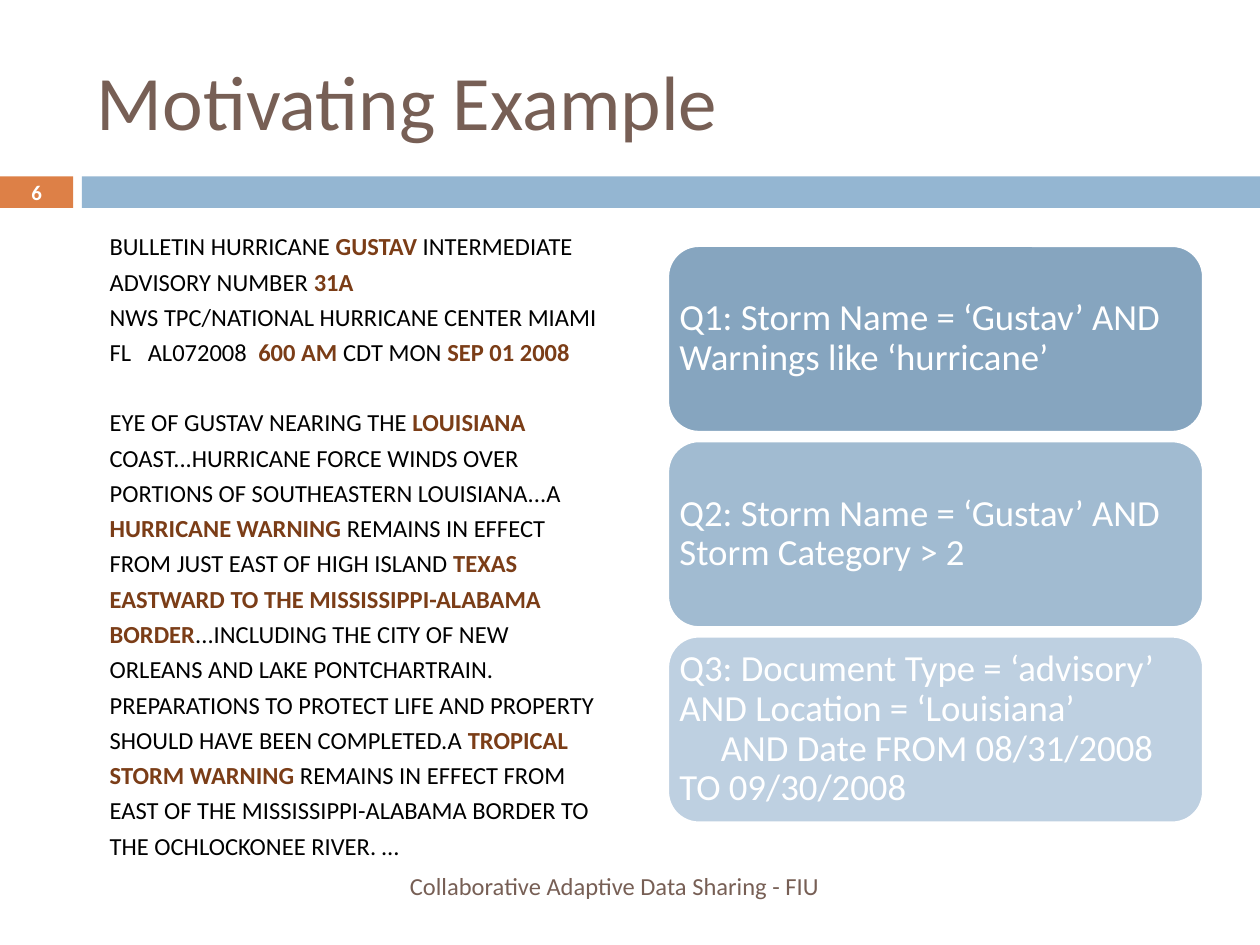
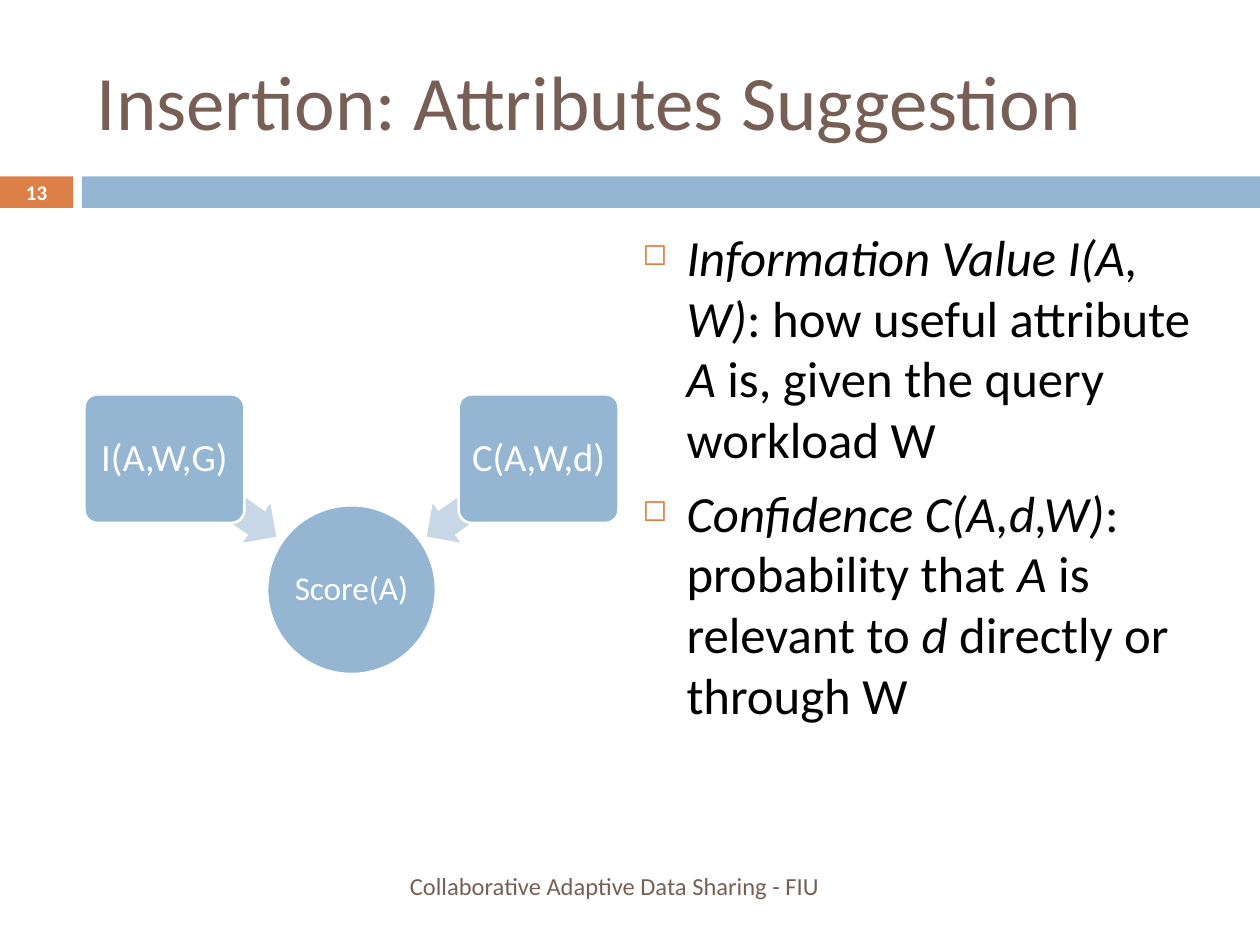
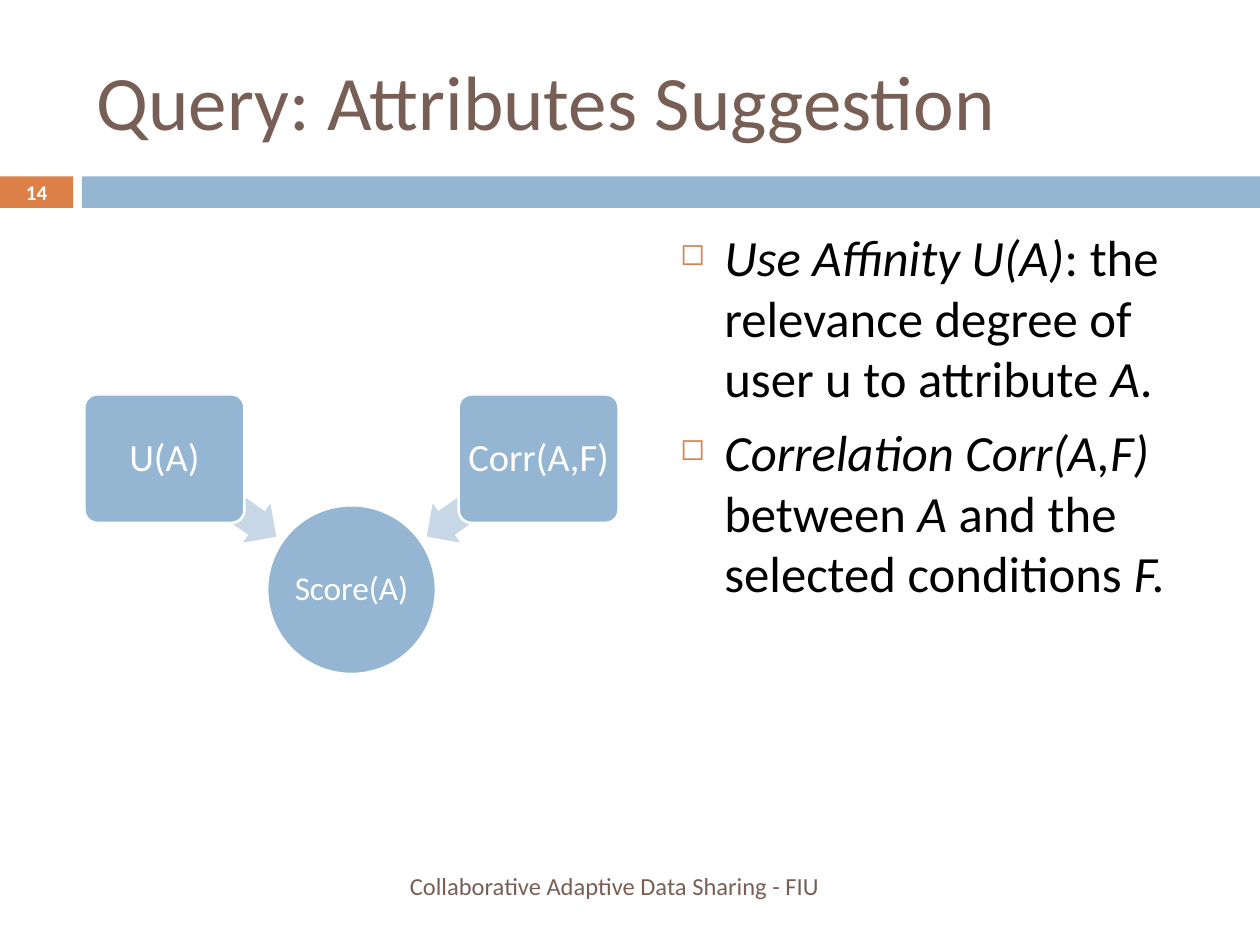
import pptx
import pptx.util
from pptx.dml.color import RGBColor
from pptx.enum.shapes import MSO_SHAPE
from pptx.enum.text import MSO_ANCHOR, PP_ALIGN
from pptx.oxml import parse_xml
from pptx.oxml.ns import nsdecls

Inches = pptx.util.Inches
Pt = pptx.util.Pt

BLACK = RGBColor(0x00, 0x00, 0x00)
WHITE = RGBColor(0xFF, 0xFF, 0xFF)
TAUPE = RGBColor(0x77, 0x5F, 0x55)
ORANGE = RGBColor(0xDD, 0x80, 0x47)
BLUE = RGBColor(0x94, 0xB6, 0xD2)
PALE_BLUE = RGBColor(0xC8, 0xD7, 0xE5)
BROWN = RGBColor(0x7B, 0x3D, 0x17)
QUERY_BLUES = [
    RGBColor(0x86, 0xA5, 0xBF),
    RGBColor(0xA1, 0xBB, 0xD1),
    RGBColor(0xBE, 0xD0, 0xE1),
]
FONT = "Calibri"


def add_box(slide, box, kind=None, fill=None, outlined=False, inset=None):
    lengths = [Inches(length) for length in box]
    if kind is None:
        shape = slide.shapes.add_textbox(*lengths)
    else:
        shape = slide.shapes.add_shape(kind, *lengths)
        shape.shadow.inherit = False
        shape.fill.solid()
        shape.fill.fore_color.rgb = fill
        if outlined:
            shape.line.color.rgb = WHITE
            shape.line.width = Pt(1.5)
        else:
            shape.line.fill.background()
    frame = shape.text_frame
    frame.word_wrap = True
    frame.vertical_anchor = MSO_ANCHOR.TOP if kind is None else MSO_ANCHOR.MIDDLE
    if inset is not None:
        frame.margin_left = frame.margin_right = Inches(inset)
        frame.margin_top = frame.margin_bottom = Inches(inset)
    return shape


def add_paragraph(frame, runs, size, color, align=PP_ALIGN.LEFT, spacing=None):
    paragraph = frame.add_paragraph() if frame.text else frame.paragraphs[0]
    paragraph.alignment = align
    paragraph.line_spacing = spacing
    paragraph.font.name = FONT
    paragraph.font.size = Pt(size)
    paragraph.font.color.rgb = color
    for text in runs:
        paragraph.add_run().text = text
    return paragraph


deck = pptx.Presentation()
deck.slide_width = Inches(10)
deck.slide_height = Inches(7.5)

slides = []
for number, heading in [
    ("6", "Motivating Example"),
    ("13", "Insertion: Attributes Suggestion"),
    ("14", "Query: Attributes Suggestion"),
]:
    slide = deck.slides.add_slide(deck.slide_layouts[6])
    slides.append(slide)
    number_band = add_box(slide, (0, 1.4, 0.58, 0.25), MSO_SHAPE.RECTANGLE, ORANGE, inset=0)
    page = add_paragraph(number_band.text_frame, [number], 11.9, WHITE, PP_ALIGN.CENTER)
    page.font.bold = True
    add_box(slide, (0.65, 1.4, 9.35, 0.25), MSO_SHAPE.RECTANGLE, BLUE)
    title = add_box(slide, (0.67, 0.25, 8.92, 1.08))
    title.text_frame.vertical_anchor = MSO_ANCHOR.MIDDLE
    add_paragraph(title.text_frame, [heading], 44, TAUPE)
    footer = add_box(slide, (0.67, 6.83, 5.93, 0.4))
    footer.text_frame.vertical_anchor = MSO_ANCHOR.MIDDLE
    add_paragraph(
        footer.text_frame, ["Collaborative Adaptive Data Sharing - FIU"], 14, TAUPE, PP_ALIGN.RIGHT
    )

example, insertion, query = slides

bulletin_lines = [
    ["BULLETIN HURRICANE ", "GUSTAV ", "INTERMEDIATE ADVISORY NUMBER ", "31A"],
    [
        "NWS TPC/NATIONAL HURRICANE CENTER MIAMI FL   AL072008  ",
        "600 AM",
        " CDT MON ",
        "SEP 01 2008",
    ],
    [
        "EYE OF GUSTAV NEARING THE ",
        "LOUISIANA",
        " COAST...HURRICANE FORCE WINDS OVER PORTIONS OF SOUTHEASTERN LOUISIANA...A ",
        "HURRICANE WARNING ",
        "REMAINS IN EFFECT FROM JUST EAST OF HIGH ISLAND ",
        "TEXAS EASTWARD TO THE MISSISSIPPI-ALABAMA BORDER",
        "...INCLUDING THE CITY OF NEW ORLEANS AND LAKE PONTCHARTRAIN. PREPARATIONS TO "
        "PROTECT LIFE AND PROPERTY SHOULD HAVE BEEN COMPLETED.A ",
        "TROPICAL STORM WARNING",
        " REMAINS IN EFFECT FROM EAST OF THE MISSISSIPPI-ALABAMA BORDER TO THE "
        "OCHLOCKONEE RIVER. …",
    ],
]
bulletin = add_box(example, (0.67, 1.74, 4.25, 5))
bulletin.text_frame.margin_left = Inches(0.2)
for runs in bulletin_lines:
    paragraph = add_paragraph(bulletin.text_frame, runs, 14, BLACK, spacing=1.2)
    for annotated in paragraph.runs[1::2]:
        annotated.font.bold = True
        annotated.font.color.rgb = BROWN
paragraph.space_before = Pt(20)

queries = [
    ["Q1: Storm Name = ‘Gustav’ AND Warnings like ‘hurricane’"],
    ["Q2: Storm Name = ‘Gustav’ AND Storm Category > 2"],
    [
        "Q3: Document Type = ‘advisory’ AND Location = ‘Louisiana’",
        "AND Date FROM 08/31/2008 TO 09/30/2008",
    ],
]
for row, (conditions, fill) in enumerate(zip(queries, QUERY_BLUES)):
    card = add_box(
        example, (5.3, 1.95 + 1.55 * row, 4.25, 1.48),
        MSO_SHAPE.ROUNDED_RECTANGLE, fill, outlined=True, inset=0.02,
    )
    for position, condition in enumerate(conditions):
        paragraph = add_paragraph(card.text_frame, [condition], 21, WHITE, spacing=0.9)
        if position:
            paragraph._p.get_or_add_pPr().set("indent", str(Inches(0.33)))

score_slides = [
    (insertion, ["I(A,W,G)", "C(A,W,d)"], 5, [
        ["Information Value I(A, W)", ": how useful attribute ", "A ",
         "is, given the query workload W"],
        ["Confidence C(A,d,W)", ": probability that ", "A ", "is relevant to ", "d ",
         "directly or through W"],
    ]),
    (query, ["U(A)", "Corr(A,F)"], 5.3, [
        ["Use Affinity U(A)", ": the relevance degree of user u to attribute ", "A", "."],
        ["Correlation Corr(A,F)", " between ", "A ", "and the selected conditions ", "F."],
    ]),
]
for slide, factors, left, definitions in score_slides:
    score = add_box(
        slide, (2.12, 4.01, 1.34, 1.34), MSO_SHAPE.OVAL, BLUE, outlined=True, inset=0.01
    )
    add_paragraph(score.text_frame, ["Score(A)"], 19, WHITE, PP_ALIGN.CENTER, 0.9)
    for factor, factor_left, arrow_left, angle in zip(
        factors, (0.67, 3.64), (1.21, 3.29), (215, 325)
    ):
        arrow = add_box(slide, (arrow_left, 3.76, 1.08, 0.38), MSO_SHAPE.LEFT_ARROW, PALE_BLUE)
        arrow.rotation = angle
        arrow.adjustments[0] = 0.6
        arrow.adjustments[1] = 0.5
        factor_box = add_box(
            slide, (factor_left, 3.13, 1.27, 1.02),
            MSO_SHAPE.ROUNDED_RECTANGLE, BLUE, outlined=True, inset=0.02,
        )
        factor_box.adjustments[0] = 0.1
        add_paragraph(factor_box.text_frame, [factor], 22, WHITE, PP_ALIGN.CENTER, 0.9)

    explanation = add_box(slide, (left, 1.74, 9.55 - left, 5))
    for runs in definitions:
        paragraph = add_paragraph(explanation.text_frame, runs, 29, BLACK)
        paragraph.space_before = Pt(7)
        for term in paragraph.runs[::2]:
            term.font.italic = True
        properties = paragraph._p.get_or_add_pPr()
        properties.set("marL", str(Inches(0.35)))
        properties.set("indent", str(Inches(-0.35)))
        bullet_parts = [
            f'<a:buClr {nsdecls("a")}><a:srgbClr val="{ORANGE}"/></a:buClr>',
            f'<a:buSzPct {nsdecls("a")} val="60000"/>',
            f'<a:buChar {nsdecls("a")} char="◻"/>',
        ]
        defaults = properties.find(pptx.oxml.ns.qn("a:defRPr"))
        for part in bullet_parts:
            defaults.addprevious(parse_xml(part))

deck.save("out.pptx")
